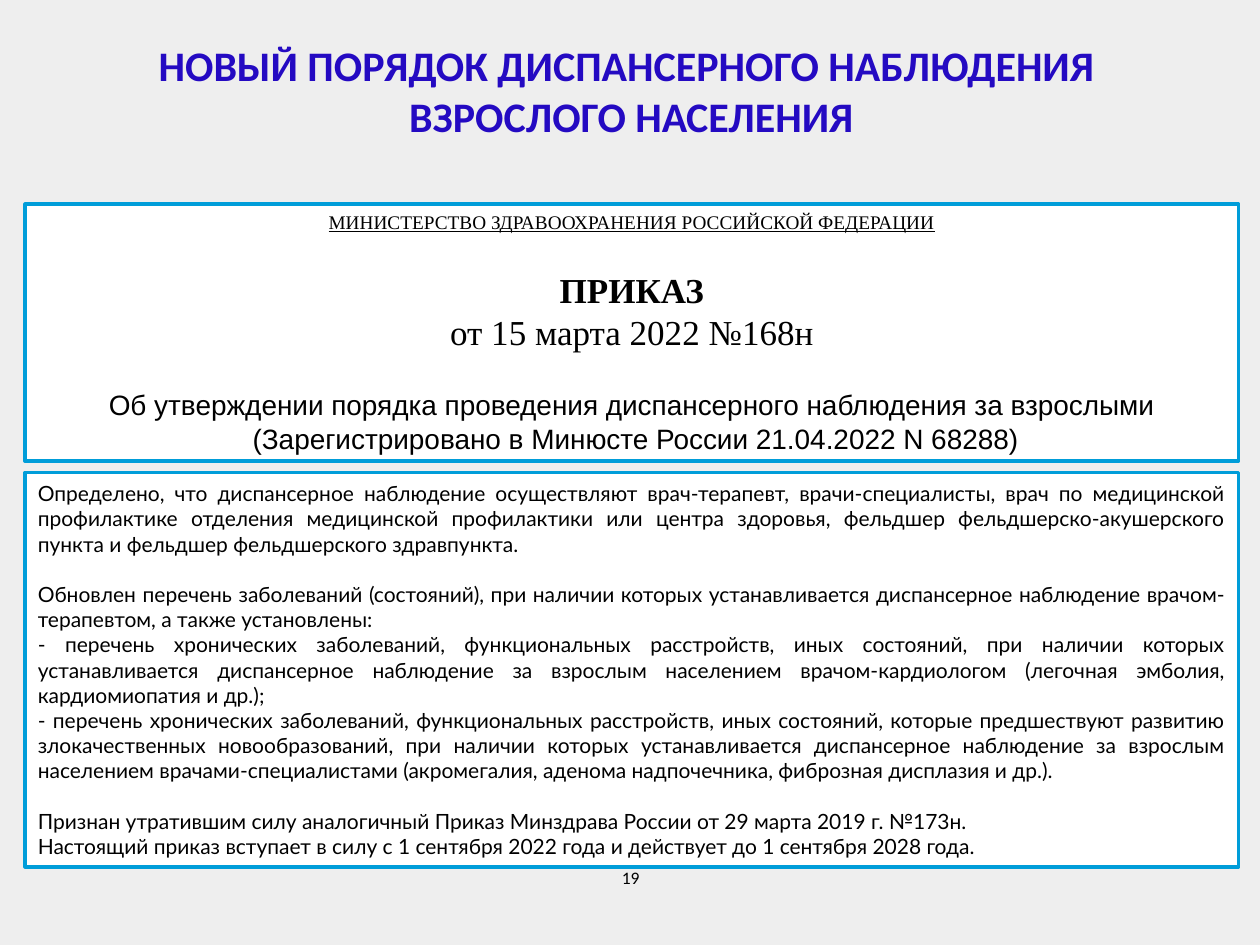
from pptx import Presentation, util as u
from pptx.dml.color import RGBColor
from pptx.enum import shapes, text
from pptx.oxml.ns import qn
from lxml import etree

BLACK, WHITE, BLUE, BORDER, GREY = "000000", "FFFFFF", "240AC2", "009DD9", "EEEEEE"
TITLE = ["НОВЫЙ ПОРЯДОК ДИСПАНСЕРНОГО НАБЛЮДЕНИЯ ", "ВЗРОСЛОГО НАСЕЛЕНИЯ"]
SERIF, SANS, BODY = "Times New Roman", "Arial", "Lato"
ORDER = [
    ("МИНИСТЕРСТВО ЗДРАВООХРАНЕНИЯ РОССИЙСКОЙ ФЕДЕРАЦИИ", SERIF, 11, {"underline": True}, 0),
    ("ПРИКАЗ", SERIF, 20, {"bold": True}, 20),
    ("от 15 марта 2022 №168н", SERIF, 20, {}, 0),
    ("Об утверждении порядка проведения диспансерного наблюдения за взрослыми", SANS, 16, {}, 20),
    (" (Зарегистрировано в Минюсте России 21.04.2022 N 68288)", SANS, 16, {}, 0),
]
SECTIONS = [
    ["Определено, что диспансерное наблюдение осуществляют врач-терапевт, врачи-специалисты, врач по медицинской профилактике отделения медицинской профилактики или центра здоровья, фельдшер фельдшерско-акушерского пункта и фельдшер фельдшерского здравпункта."],
    ["Обновлен перечень заболеваний (состояний), при наличии которых устанавливается диспансерное наблюдение врачом-терапевтом, а также установлены:",
     "- перечень хронических заболеваний, функциональных расстройств, иных состояний, при наличии которых устанавливается диспансерное наблюдение за взрослым населением врачом-кардиологом (легочная эмболия, кардиомиопатия и др.);",
     "- перечень хронических заболеваний, функциональных расстройств, иных состояний, которые предшествуют развитию злокачественных новообразований, при наличии которых устанавливается диспансерное наблюдение за взрослым населением врачами-специалистами (акромегалия, аденома надпочечника, фиброзная дисплазия и др.)."],
    ["Признан утратившим силу аналогичный Приказ Минздрава России от 29 марта 2019 г. №173н.",
     "Настоящий приказ вступает в силу с 1 сентября 2022 года и действует до 1 сентября 2028 года."],
]
SECTION_GAP = 14.4


def rgb(value):
    """Return a colour from its hex string."""
    return RGBColor.from_string(value)


def place(s, left, top, width, height):
    """Move and size a shape in inches."""
    s.left, s.top, s.width, s.height = map(u.Inches, (left, top, width, height))


def frame(s):
    """Give a panel its white fill and coloured border."""
    s.fill.solid()
    s.fill.fore_color.rgb = rgb(WHITE)
    s.line.color.rgb = rgb(BORDER)
    s.line.width = u.Pt(2)


def write(s, rows, align, anchor, color=BLACK):
    """Write rows of text, font, size, styles and space before."""
    tf = s.text_frame
    tf.word_wrap = True
    tf.auto_size = text.MSO_AUTO_SIZE.NONE
    tf.vertical_anchor = anchor
    for i, (words, font, size, styles, gap) in enumerate(rows):
        p = tf.add_paragraph() if i else tf.paragraphs[0]
        pPr = p._p.get_or_add_pPr()
        pPr.set("marL", "0")
        pPr.set("indent", "0")
        etree.SubElement(pPr, qn("a:buNone"))
        p.alignment = align
        p.space_before = u.Pt(gap)
        r = p.add_run()
        r.text = words
        r.font.name, r.font.size = font, u.Pt(size)
        r.font.color.rgb = rgb(color)
        for name, value in styles.items():
            setattr(r.font, name, value)


def main():
    """Build the slide and save it."""
    prs = Presentation()
    prs.slide_width, prs.slide_height = u.Inches(10), u.Inches(7.5)
    slide = prs.slides.add_slide(prs.slide_layouts[1])
    slide.background.fill.solid()
    slide.background.fill.fore_color.rgb = rgb(GREY)
    center, middle = text.PP_ALIGN.CENTER, text.MSO_ANCHOR.MIDDLE

    title, body = slide.placeholders
    place(title, 0.09, 0.26, 9.84, 0.91)
    write(title, [(t, "Calibri", 24, {"bold": True}, 0) for t in TITLE], center, middle, BLUE)

    order = slide.shapes.add_shape(shapes.MSO_SHAPE.RECTANGLE, 0, 0, 0, 0)
    order.shadow.inherit = False
    place(order, 0.2, 1.62, 9.63, 2.04)
    frame(order)
    write(order, ORDER, center, middle)

    place(body, 0.2, 3.75, 9.63, 3.13)
    frame(body)
    rows = [(t, BODY, 12, {}, SECTION_GAP if n and not i else 0)
            for n, section in enumerate(SECTIONS) for i, t in enumerate(section)]
    write(body, rows, text.PP_ALIGN.JUSTIFY, middle)

    number = slide.shapes.add_textbox(0, 0, 0, 0)
    place(number, 3.42, 6.83, 3.17, 0.52)
    write(number, [("19", "Calibri", 10, {}, 0)], center, text.MSO_ANCHOR.TOP)
    prs.save("out.pptx")


if __name__ == "__main__":
    main()
